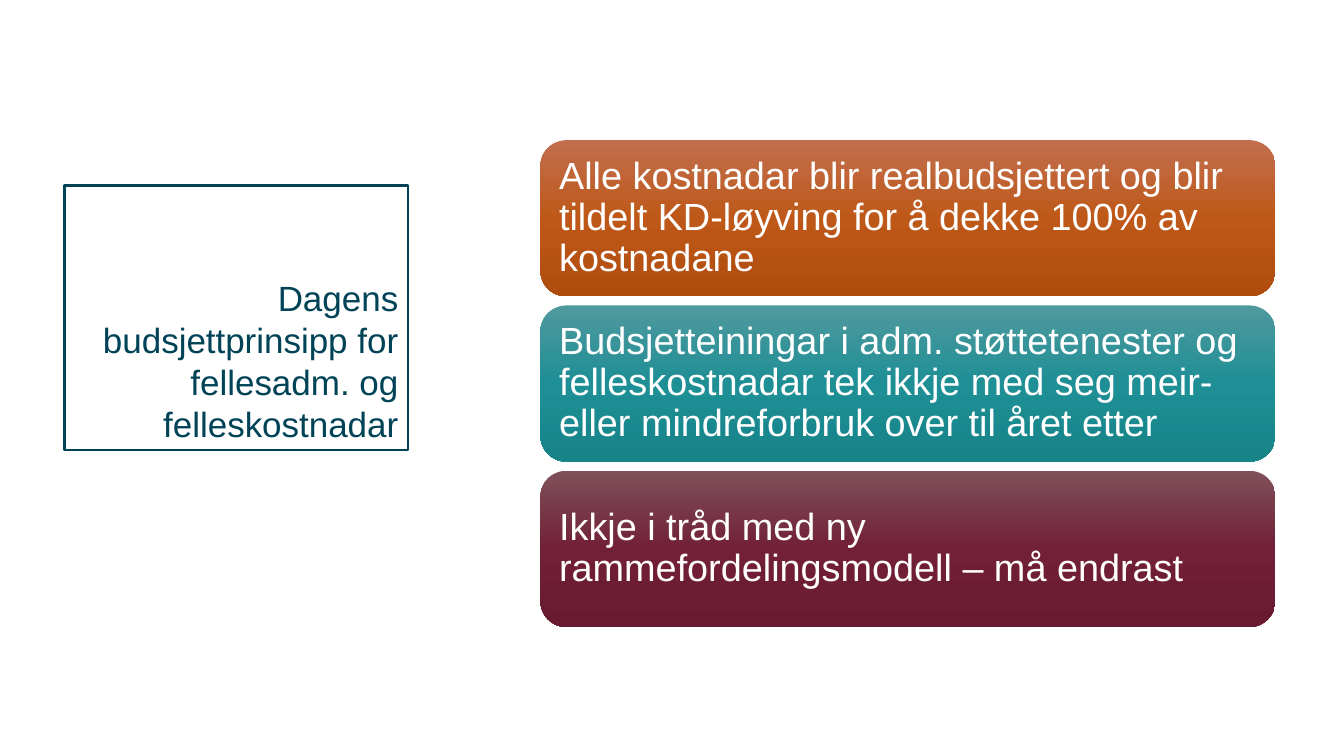
from copy import deepcopy
from dataclasses import dataclass

from pptx import Presentation
from pptx import util as u
from pptx.dml.color import RGBColor
from pptx.enum import shapes, text
from pptx.oxml.ns import qn

COLORS = {
    "background": "FFFFFF",
    "title": "004357",
    "card_text": "FFFFFF",
    "orange": ("C16F4F", "BE5818", "AF4D0F"),
    "teal": ("50999E", "1E8F95", "168489"),
    "burgundy": ("7F505A", "712037", "671A30"),
}
FONT = "Arial"
CARD_LEFT, CARD_TOP = 5.36, 1.39
CARD_WIDTH, CARD_HEIGHT, CARD_PITCH = 7.29, 1.55, 1.64


@dataclass
class Card:
    wording: str
    color: str


CARDS = [
    Card("Alle kostnadar blir realbudsjettert og blir tildelt KD-løyving "
         "for å dekke 100% av kostnadane", "orange"),
    Card("Budsjetteiningar i adm. støttetenester og felleskostnadar tek ikkje "
         "med seg meir- eller mindreforbruk over til året etter", "teal"),
    Card("Ikkje i tråd med ny rammefordelingsmodell – må endrast", "burgundy"),
]


def write(box, wording: str, size: int, color: str, align, anchor) -> None:
    """Fill a shape with one formatted paragraph."""
    frame = box.text_frame
    frame.text = wording
    frame.word_wrap = True
    frame.auto_size = text.MSO_AUTO_SIZE.NONE
    frame.vertical_anchor = anchor
    para = frame.paragraphs[0]
    para.alignment = align
    for span in para.runs:
        span.font.name = FONT
        span.font.size = u.Pt(size)
        span.font.color.rgb = RGBColor.from_string(color)


def shade(box, colors: tuple[str, ...]) -> None:
    """Apply an evenly spaced gradient from top to bottom."""
    box.fill.gradient()
    box.fill.gradient_angle = 270
    stop_list = box._element.spPr.find(qn("a:gradFill")).find(qn("a:gsLst"))
    while len(stop_list) < len(colors):
        stop_list.append(deepcopy(stop_list[-1]))
    for index, (stop, color) in enumerate(zip(box.fill.gradient_stops, colors)):
        stop.position = index / (len(colors) - 1)
        stop.color.rgb = RGBColor.from_string(color)


def add_title(page) -> None:
    box = page.shapes.title
    box.left, box.top = u.Inches(0.64), u.Inches(1.84)
    box.width, box.height = u.Inches(3.41), u.Inches(2.62)
    box.line.color.rgb = RGBColor.from_string(COLORS["title"])
    box.line.width = u.Pt(1.5)
    write(box, "Dagens budsjettprinsipp for fellesadm. og felleskostnadar",
          25, COLORS["title"], text.PP_ALIGN.RIGHT, text.MSO_ANCHOR.BOTTOM)


def add_card(page, card: Card, row: int) -> None:
    box = page.shapes.add_shape(
        shapes.MSO_SHAPE.ROUNDED_RECTANGLE,
        u.Inches(CARD_LEFT), u.Inches(CARD_TOP + row * CARD_PITCH),
        u.Inches(CARD_WIDTH), u.Inches(CARD_HEIGHT))
    box.shadow.inherit = False
    box.line.fill.background()
    shade(box, COLORS[card.color])
    write(box, card.wording, 27, COLORS["card_text"],
          text.PP_ALIGN.LEFT, text.MSO_ANCHOR.MIDDLE)
    frame = box.text_frame
    # The rounded corners add to the text inset
    frame.margin_left = frame.margin_right = u.Inches(0.11)
    frame.margin_top = frame.margin_bottom = u.Inches(0.11)
    frame.paragraphs[0].line_spacing = 0.9


def main() -> None:
    deck = Presentation()
    deck.slide_width, deck.slide_height = u.Inches(13.33), u.Inches(7.5)
    page = deck.slides.add_slide(deck.slide_layouts[5])
    page.background.fill.solid()
    page.background.fill.fore_color.rgb = RGBColor.from_string(COLORS["background"])

    # Framed heading on the left
    add_title(page)

    # Stacked statements on the right
    for row, card in enumerate(CARDS):
        add_card(page, card, row)

    deck.save("out.pptx")


if __name__ == "__main__":
    main()
